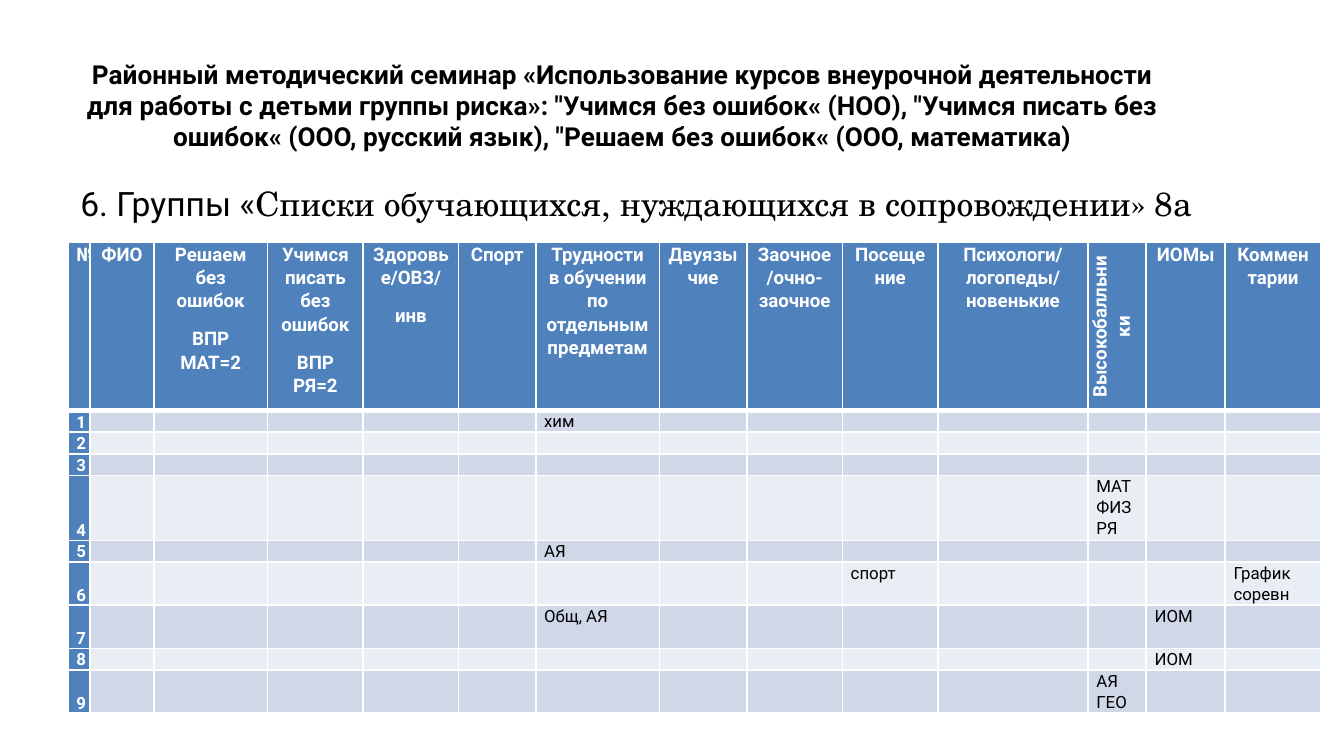
"""Build the slide with the register of 8a pupils who need support."""
from lxml import etree
from pptx import Presentation
from pptx.dml.color import RGBColor
from pptx.enum import text
from pptx.oxml import ns
from pptx.util import Pt

WHITE = RGBColor(0xFF, 0xFF, 0xFF)
BLACK = RGBColor(0, 0, 0)
BLUE = RGBColor(0x4F, 0x81, 0xBD)
BANDS = [RGBColor(0xD0, 0xD8, 0xE8), RGBColor(0xE9, 0xED, 0xF4)]
SANS, SERIF = "Roboto", "TeX Gyre Schola"

TITLE = ('Районный методический семинар «Использование курсов внеурочной деятельности '
         'для работы с детьми группы риска»: "Учимся без ошибок« (НОО), "Учимся писать без '
         'ошибок« (ООО, русский язык), "Решаем без ошибок« (ООО, математика)')
HEADING = [("6. Группы «", SANS),
           ("Списки обучающихся, нуждающихся в сопровождении» 8а", SERIF)]
COLUMNS = [
    ("№", 11.5), ("ФИО", 34.2), ("Решаем без ошибок\nВПР МАТ=2", 61),
    ("Учимся писать без ошибок\nВПР РЯ=2", 51.2), ("Здоровье/ОВЗ/\nинв", 51.2),
    ("Спорт", 41.3), ("Трудности в обучении по отдельным предметам", 66.2),
    ("Двуязычие", 46.9), ("Заочное/очно-заочное", 51.2), ("Посещение", 51.2),
    ("Психологи/логопеды/новенькие", 80.4), ("Высокобалльники", 31.2),
    ("ИОМы", 42.3), ("Комментарии", 51.2),
]
SUBJECT, ATTENDANCE, TOP_SCORER, PLAN, COMMENT = 6, 9, 11, 12, 13
PUPILS = [
    (1, {SUBJECT: "хим"}), (1, {}), (1, {}), (3, {TOP_SCORER: "МАТ ФИЗ РЯ"}),
    (1, {SUBJECT: "АЯ"}), (2, {ATTENDANCE: "спорт", COMMENT: "График соревн"}),
    (2, {SUBJECT: "Общ, АЯ", PLAN: "ИОМ"}), (1, {PLAN: "ИОМ"}), (2, {TOP_SCORER: "АЯ ГЕО"}),
]
HEADER_HEIGHT, LINE_HEIGHT = 90, 11.55


def style_run(r, size, color, bold=False, font=SANS):
    r.font.name, r.font.size, r.font.bold = font, Pt(size), bold
    r.font.color.rgb = color


def add_textbox(s, left, top, width, height):
    tf = s.shapes.add_textbox(Pt(left), Pt(top), Pt(width), Pt(height)).text_frame
    tf.word_wrap = True
    return tf


def set_borders(cell, bottom):
    tc_pr = cell._tc.get_or_add_tcPr()
    for i, (side, width) in enumerate([("L", 1), ("R", 1), ("T", 1), ("B", bottom)]):
        ln = etree.Element(ns.qn(f"a:ln{side}"), w=str(Pt(width)))
        solid = etree.SubElement(ln, ns.qn("a:solidFill"))
        etree.SubElement(solid, ns.qn("a:srgbClr"), val=str(WHITE))
        tc_pr.insert(i, ln)


def fill_cell(cell, words, fill, size, color, bold, align, anchor, bottom=1):
    cell.margin_left = cell.margin_right = Pt(4.5)
    cell.margin_top = cell.margin_bottom = 0
    cell.vertical_anchor = anchor
    cell.fill.solid()
    cell.fill.fore_color.rgb = fill
    set_borders(cell, bottom)
    if not words:
        p = cell.text_frame.paragraphs[0]
        etree.SubElement(p._p, ns.qn("a:endParaRPr"), sz=str(size * 100))
        return
    cell.text_frame.text = words
    for p in cell.text_frame.paragraphs:
        p.alignment, p.line_spacing, p.space_after = align, 1.07, Pt(8)
        for r in p.runs:
            style_run(r, size, color, bold)


def add_register(s):
    heights = [HEADER_HEIGHT] + [lines * LINE_HEIGHT for lines, _ in PUPILS]
    frame = s.shapes.add_table(len(heights), len(COLUMNS), Pt(36.4), Pt(130),
                               Pt(sum(w for _, w in COLUMNS)), Pt(sum(heights)))
    table = frame.table
    for row, height in zip(table.rows, heights):
        row.height = Pt(height)
    left, center = text.PP_ALIGN.LEFT, text.PP_ALIGN.CENTER
    top, bottom = text.MSO_ANCHOR.TOP, text.MSO_ANCHOR.BOTTOM
    for c, (label, width) in enumerate(COLUMNS):
        table.columns[c].width = Pt(width)
        fill_cell(table.cell(0, c), label, BLUE, 10, WHITE, True, center, top, 3)
        for n, (_, notes) in enumerate(PUPILS, 1):
            cell = table.cell(n, c)
            if c == 0:
                fill_cell(cell, str(n), BLUE, 9, WHITE, True, left, bottom)
            else:
                fill_cell(cell, notes.get(c), BANDS[(n - 1) % 2], 9, BLACK, False, left, top)
    table.cell(0, TOP_SCORER)._tc.get_or_add_tcPr().set("vert", "vert270")


def main():
    prs = Presentation()
    prs.slide_width, prs.slide_height = Pt(720), Pt(405)
    s = prs.slides.add_slide(prs.slide_layouts[6])

    tf = add_textbox(s, 36, 16.5, 595, 67.5)
    tf.margin_top, tf.margin_bottom = Pt(16), Pt(4)
    tf.vertical_anchor = text.MSO_ANCHOR.MIDDLE
    tf.text = TITLE
    p = tf.paragraphs[0]
    p.alignment = text.PP_ALIGN.CENTER
    style_run(p.runs[0], 14, BLACK, True)

    p = add_textbox(s, 36, 94.5, 648, 294.5).paragraphs[0]
    for words, font in HEADING:
        r = p.add_run()
        r.text = words
        style_run(r, 18, BLACK, font=font)

    add_register(s)
    prs.save("out.pptx")


if __name__ == "__main__":
    main()
